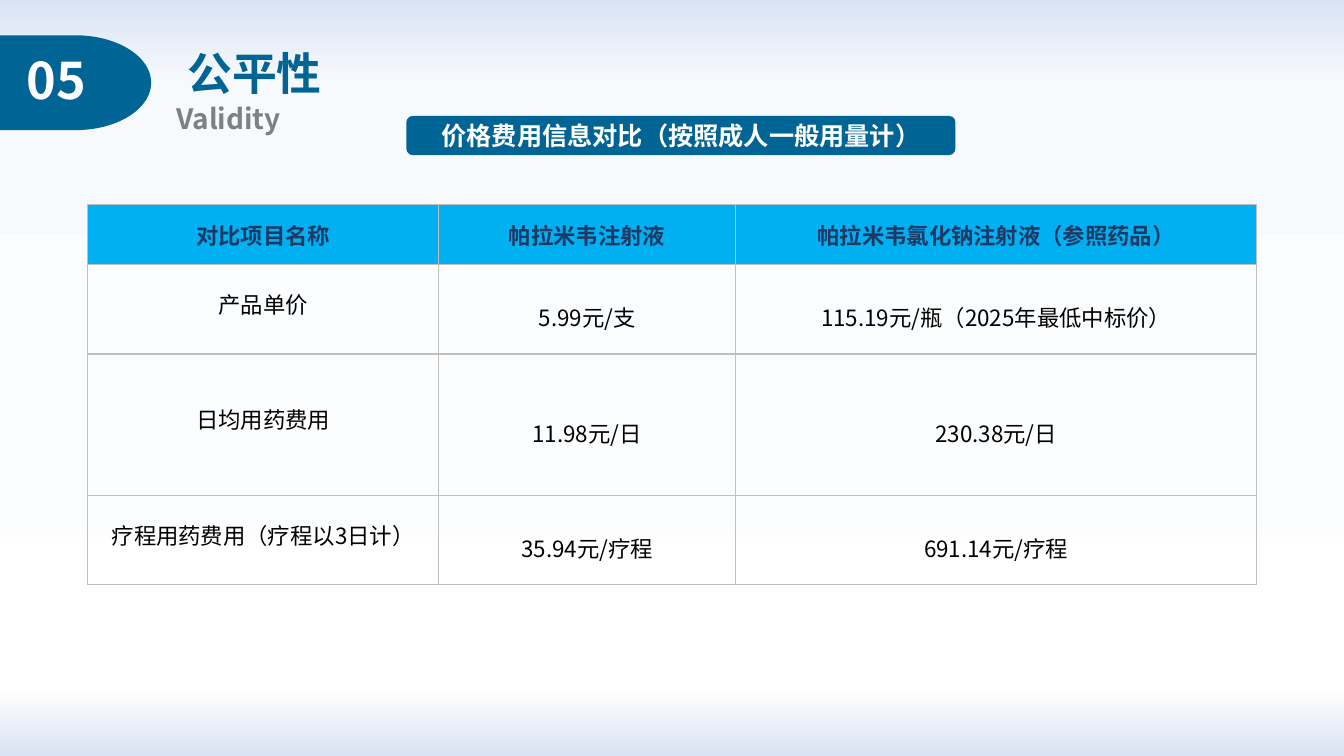
from lxml.etree import SubElement
from pptx import Presentation
from pptx.dml.color import RGBColor
from pptx.enum.shapes import MSO_SHAPE
from pptx.enum.text import MSO_ANCHOR, PP_ALIGN
from pptx.oxml.ns import qn
from pptx.util import Cm, Pt

FONT = "Noto Sans CJK SC"
BLUE, WHITE, GREY, NAVY, BLACK = "006494", "FFFFFF", "808080", "203864", "000000"
HEADER_FILL, BORDER = "00B0F0", "BFBFBF"
BACKGROUND_STOPS = [(0, "DAE3F3"), (11, "F7FAFD"), (91, "FFFFFF"), (100, "DAE3F3")]
COLUMN_WIDTHS = [8.84, 7.49, 13.13]
ROW_HEIGHTS = [1.5, 2.26, 3.56, 2.26]
PRICES = [
    ["对比项目名称", "帕拉米韦注射液", "帕拉米韦氯化钠注射液（参照药品）"],
    ["产品单价", "5.99元/支", "115.19元/瓶（2025年最低中标价）"],
    ["日均用药费用", "11.98元/日", "230.38元/日"],
    ["疗程用药费用（疗程以3日计）", "35.94元/疗程", "691.14元/疗程"],
]


def color(value):
    """Turn a hex string into a colour."""
    return RGBColor.from_string(value)


def write(frame, text, size, ink, bold=True, align=PP_ALIGN.CENTER, spacing=None):
    """Fill a text frame with one styled paragraph."""
    para = frame.paragraphs[0]
    para.text = text
    para.alignment = align
    para.line_spacing = spacing
    font = para.font
    font.size, font.bold, font.name = Pt(size), bold, FONT
    font.color.rgb = color(ink)
    latin = para._p.find(".//" + qn("a:latin"))
    latin.addnext(latin.makeelement(qn("a:ea"), {"typeface": FONT}))


def add_label(page, box, text, size, ink, align=PP_ALIGN.JUSTIFY, spacing=None):
    """Place a wrapping text box."""
    frame = page.shapes.add_textbox(*map(Cm, box)).text_frame
    frame.word_wrap = True
    write(frame, text, size, ink, align=align, spacing=spacing)


def add_block(page, kind, box):
    """Place a flat blue shape without outline."""
    block = page.shapes.add_shape(kind, *map(Cm, box))
    block.shadow.inherit = False
    block.fill.solid()
    block.fill.fore_color.rgb = color(BLUE)
    block.line.fill.background()
    return block


def paint_background(page):
    """Give the page its vertical gradient."""
    fill = page.background.fill
    fill.gradient()
    fill.gradient_angle = 270
    stops = page._element.find(".//" + qn("a:gsLst"))
    for stop in list(stops):
        stops.remove(stop)
    for percent, value in BACKGROUND_STOPS:
        stop = SubElement(stops, qn("a:gs"), pos=str(percent * 1000))
        SubElement(stop, qn("a:srgbClr"), val=value)


def add_heading(page, box):
    """Place the section number, title and subtitle."""
    left, top, width, height = box
    add_block(page, MSO_SHAPE.FLOWCHART_DELAY, (left, top + 0.53, 3.81, 2.39))
    add_label(page, (left + 0.43, top + 0.76, 2.16, 1.8), "05", 36, WHITE)
    add_label(page, (left + 3.28, top, width - 3.28, 1.85), "公平性", 32, BLUE,
              PP_ALIGN.CENTER, 1.5)
    add_label(page, (left + 4.19, top + height - 1.52, 4.45, 1.52), "Validity", 20, GREY,
              spacing=1.5)


def add_banner(page, box):
    """Place the rounded caption above the table."""
    frame = add_block(page, MSO_SHAPE.FLOWCHART_ALTERNATE_PROCESS, box).text_frame
    frame.vertical_anchor = MSO_ANCHOR.MIDDLE
    frame.word_wrap = True
    write(frame, "价格费用信息对比（按照成人一般用量计）", 18, WHITE)


def outline_cell(cell):
    """Draw thin grey borders around a cell."""
    properties = cell._tc.get_or_add_tcPr()
    for side in ("a:lnL", "a:lnR", "a:lnT", "a:lnB"):
        line = SubElement(properties, qn(side), w=str(Pt(1)))
        SubElement(SubElement(line, qn("a:solidFill")), qn("a:srgbClr"), val=BORDER)


def style_cell(cell, text, is_header, is_label):
    """Write and format one table cell."""
    cell.margin_left = cell.margin_right = Cm(0.19)
    cell.margin_top = cell.margin_bottom = 0
    cell.vertical_anchor = MSO_ANCHOR.MIDDLE
    outline_cell(cell)
    if is_header:
        cell.fill.solid()
        cell.fill.fore_color.rgb = color(HEADER_FILL)
        write(cell.text_frame, text, 16, NAVY)
    else:
        cell.fill.background()
        write(cell.text_frame, text, 16, BLACK, bold=False,
              spacing=Pt(15) if is_label else 1.5)


def add_price_table(page, box):
    """Place the price comparison table."""
    table = page.shapes.add_table(len(PRICES), len(PRICES[0]), *map(Cm, box)).table
    table.horz_banding = False
    for column, width in zip(table.columns, COLUMN_WIDTHS):
        column.width = Cm(width)
    for row, height in zip(table.rows, ROW_HEIGHTS):
        row.height = Cm(height)
    for row_index, texts in enumerate(PRICES):
        for column_index, text in enumerate(texts):
            style_cell(table.cell(row_index, column_index), text,
                       row_index == 0, column_index == 0)


def main():
    """Build and save the deck."""
    deck = Presentation()
    deck.slide_width, deck.slide_height = Cm(33.87), Cm(19.05)
    page = deck.slides.add_slide(deck.slide_layouts[6])
    paint_background(page)
    add_heading(page, (0, 0.36, 9.55, 3.17))
    add_price_table(page, (2.21, 5.16, sum(COLUMN_WIDTHS), sum(ROW_HEIGHTS)))
    add_banner(page, (10.24, 2.92, 13.84, 0.99))
    deck.save("out.pptx")


if __name__ == "__main__":
    main()
